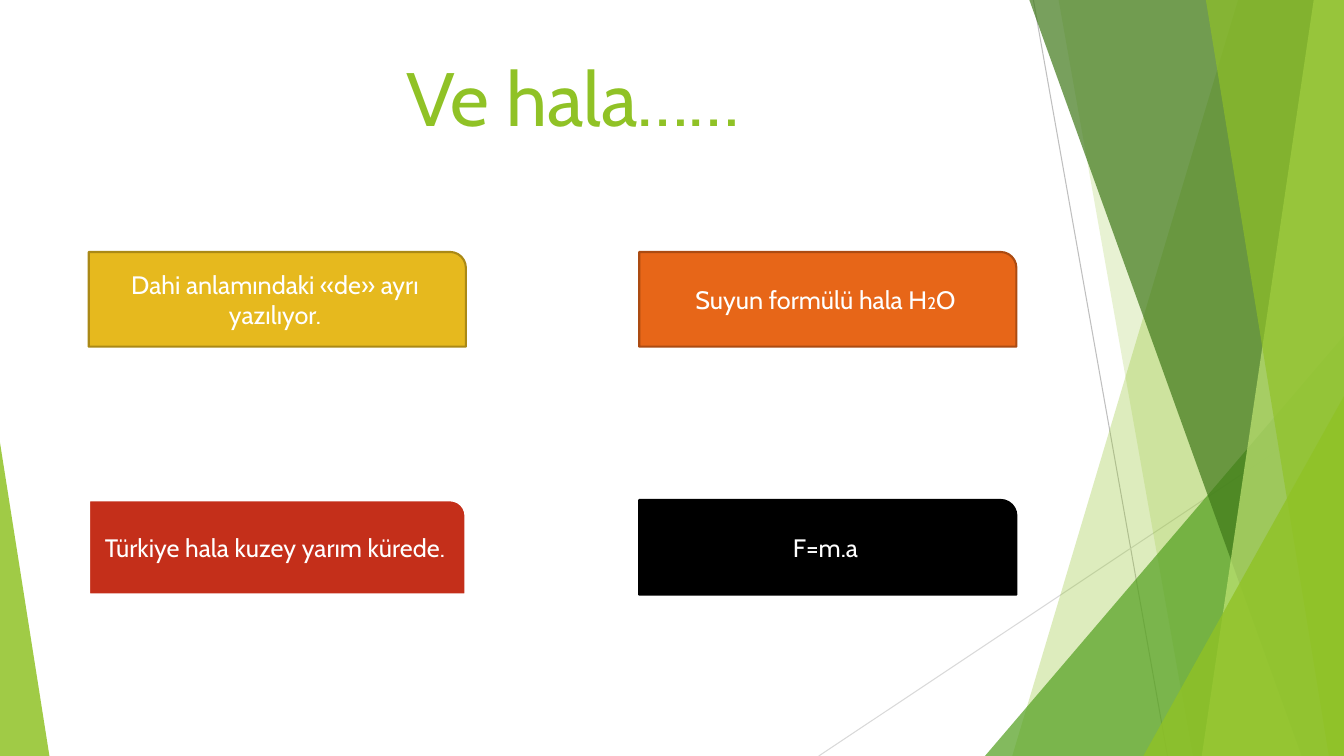
from dataclasses import dataclass

from lxml import etree
from pptx import Presentation
from pptx import util as u
from pptx.dml.color import RGBColor
from pptx.enum import shapes as s, text as t
from pptx.oxml.ns import qn

WIDE, HIGH = u.Inches(13.33), u.Inches(7.5)
FONT, LIME, WHITE = "Cabin", "90C226", "FFFFFF"


@dataclass
class Ray:
    start: tuple[float, float]
    end: tuple[float, float]
    hue: str


@dataclass
class Blade:
    """Panel from a slanted left side to the right edge of the slide."""
    top: float
    foot: float
    hue: str
    alpha: int


@dataclass
class Wedge:
    """Triangle on the bottom edge, apex at share tip of its width."""
    left: float
    top: float
    wide: float
    tip: int
    hue: str
    alpha: int


@dataclass
class Card:
    col: int
    row: int
    runs: list[tuple[str, int]]
    hue: str
    edge: str
    line: float = 1.5


# Lengths are percentages of the slide's width and height.
DECOR = [
    Ray((76.89, 0), (86.87, 100), "BFBFBF"),
    Ray((100, 53.73), (60.92, 100), "D9D9D9"),
    Blade(92.12, 75.32, LIME, 30),
    Blade(78.77, 88.75, LIME, 20),
    Wedge(73.29, 44.4, 26.71, 1, "54A021", 72),
    Blade(76.59, 96.85, "3F7819", 70),
    Blade(97.75, 89.42, "C0E474", 70),
    Blade(89.72, 98.87, LIME, 65),
    Wedge(85.07, 52.4, 14.93, 1, LIME, 80),
    Wedge(0, 58.53, 3.68, 0, LIME, 85),
]
CARDS = [
    Card(0, 0, [("Dahi anlamındaki «de» ayrı yazılıyor.", 18)], "E6B91E", "AA8916"),
    Card(1, 0, [("Suyun formülü hala H", 18), ("2", 12), ("O", 18)], "E76618", "AB4B12"),
    Card(0, 1, [("Türkiye hala kuzey yarım kürede.", 18)], "C42F1A", WHITE, 2),
    Card(1, 1, [("F=m.a", 18)], "000000", "000000"),
]


def across(share: float) -> int:
    return round(WIDE * share / 100)


def down(share: float) -> int:
    return round(HIGH * share / 100)


def box(left: float, top: float, wide: float, high: float) -> tuple:
    return across(left), down(top), across(wide), down(high)


def paint(part, hue: str, alpha: int = 100) -> None:
    """Give a fill a solid colour with the given opacity in percent."""
    part.solid()
    part.fore_color.rgb = RGBColor.from_string(hue)
    if alpha < 100:
        tint = part._xPr.find(f".//{qn('a:srgbClr')}")
        etree.SubElement(tint, qn("a:alpha"), val=str(alpha * 1000))


def style(run, size: int, hue: str) -> None:
    for key, val in {"name": FONT, "size": u.Pt(size)}.items():
        setattr(run.font, key, val)
    paint(run.font.fill, hue)


def draw_ray(slide, ray: Ray) -> None:
    ends = [f(v) for p in (ray.start, ray.end) for f, v in zip((across, down), p)]
    line = slide.shapes.add_connector(s.MSO_CONNECTOR.STRAIGHT, *ends)
    line.line.width = u.Pt(0.75)
    paint(line.line.fill, ray.hue)
    etree.SubElement(line.element.spPr, qn("a:effectLst"))


def draw_panel(slide, item: Blade | Wedge) -> None:
    if isinstance(item, Blade):
        pen = slide.shapes.build_freeform(across(item.top), 0)
        pen.add_line_segments([(WIDE, 0), (WIDE, HIGH), (across(item.foot), HIGH)])
        panel = pen.convert_to_shape()
    else:
        area = box(item.left, item.top, item.wide, 100 - item.top)
        panel = slide.shapes.add_shape(s.MSO_SHAPE.ISOSCELES_TRIANGLE, *area)
        panel.adjustments[0] = item.tip
    panel.shadow.inherit = False
    panel.line.fill.background()
    paint(panel.fill, item.hue, item.alpha)


def draw_card(slide, card: Card) -> None:
    area = box(6.6 + 40.96 * card.col, 33.33 + 32.8 * card.row, 28.06, 12.53)
    shape = slide.shapes.add_shape(s.MSO_SHAPE.ROUND_1_RECTANGLE, *area)
    shape.shadow.inherit = False
    paint(shape.fill, card.hue)
    shape.line.width = u.Pt(card.line)
    paint(shape.line.fill, card.edge)
    frame = shape.text_frame
    frame.word_wrap = True
    frame.vertical_anchor = t.MSO_ANCHOR.MIDDLE
    para = frame.paragraphs[0]
    para.alignment = t.PP_ALIGN.CENTER
    for words, size in card.runs:
        run = para.add_run()
        run.text = words
        style(run, size, WHITE)


def set_title(slide, words: str) -> None:
    title = slide.shapes.title
    title.element.getparent().append(title.element)  # in front of the panels
    area = box(29.48, 6, 70.52, 19.2)
    for key, val in zip(("left", "top", "width", "height"), area):
        setattr(title, key, val)
    frame = title.text_frame
    form = {"word_wrap": True, "auto_size": t.MSO_AUTO_SIZE.NONE,
            "vertical_anchor": t.MSO_ANCHOR.TOP}
    for key, val in form.items():
        setattr(frame, key, val)
    para = frame.paragraphs[0]
    para.alignment = t.PP_ALIGN.LEFT
    run = para.add_run()
    run.text = words
    style(run, 54, LIME)


def main() -> None:
    deck = Presentation()
    deck.slide_width, deck.slide_height = WIDE, HIGH
    slide = deck.slides.add_slide(deck.slide_layouts[5])
    for item in DECOR:
        draw = draw_ray if isinstance(item, Ray) else draw_panel
        draw(slide, item)
    set_title(slide, "Ve hala……")
    for card in CARDS:
        draw_card(slide, card)
    deck.save("out.pptx")


if __name__ == "__main__":
    main()
